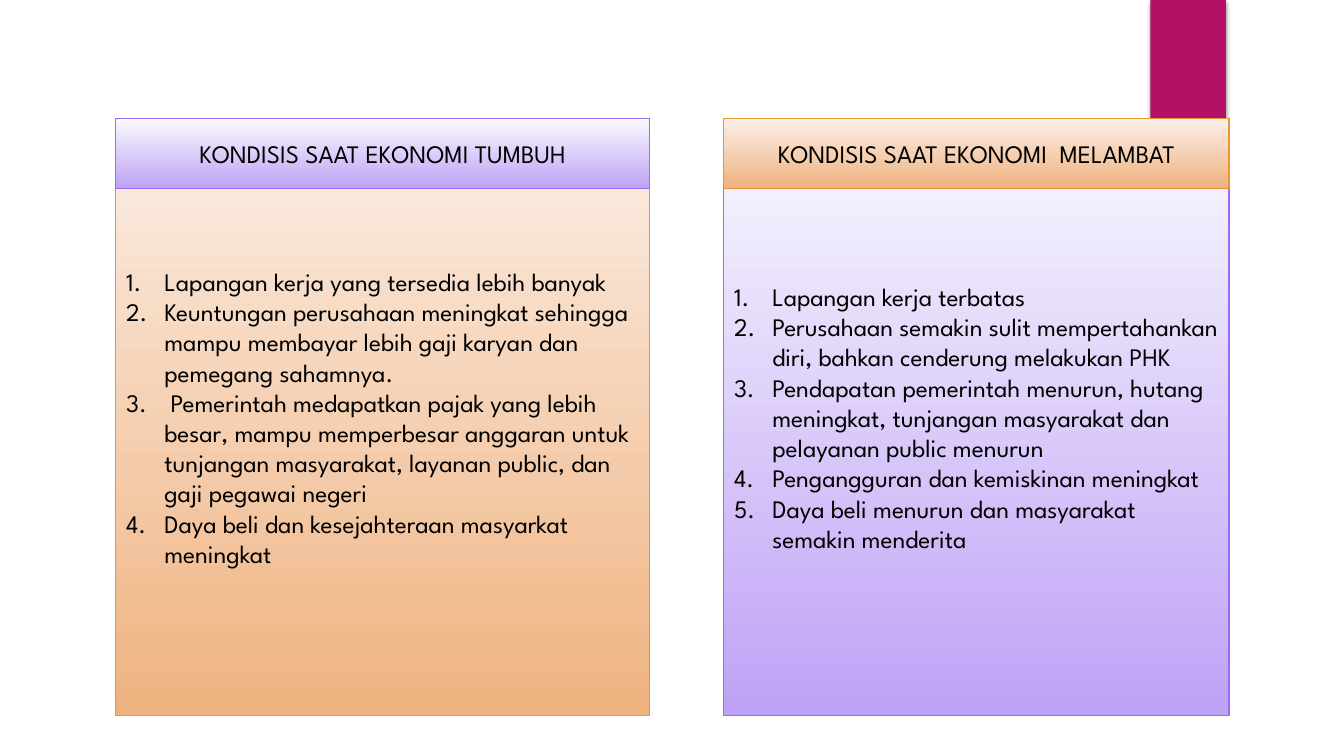
from lxml.etree import SubElement
from pptx import Presentation
from pptx.dml.color import RGBColor
from pptx.enum.shapes import MSO_SHAPE
from pptx.enum.text import MSO_ANCHOR, MSO_AUTO_SIZE, PP_ALIGN
from pptx.oxml.ns import qn
from pptx.util import Inches, Pt

FONT = "League Spartan"
BLACK = RGBColor(0, 0, 0)
MAGENTA = RGBColor(0xB3, 0x11, 0x66)
ORANGE = (RGBColor(0xFB, 0xEF, 0xE7), RGBColor(0xEF, 0xB2, 0x7F), RGBColor(0xE9, 0x94, 0x3A))
PURPLE = (RGBColor(0xFA, 0xF9, 0xFE), RGBColor(0xBE, 0xA2, 0xF6), RGBColor(0x9B, 0x6B, 0xF2))

TOP, HEADING_HEIGHT, PANEL_HEIGHT = 1.18, 0.69, 5.92
INDENT = Inches(0.38)

CONDITIONS = [
    {
        "heading": "KONDISIS SAAT EKONOMI TUMBUH",
        "points": [
            "Lapangan kerja yang tersedia lebih banyak",
            "Keuntungan perusahaan meningkat sehingga mampu membayar lebih gaji karyan dan pemegang sahamnya.",
            " Pemerintah medapatkan pajak yang lebih besar, mampu memperbesar anggaran untuk tunjangan masyarakat, layanan public, dan gaji pegawai negeri",
            "Daya beli dan kesejahteraan masyarkat meningkat",
        ],
        "left": 1.15, "width": 5.29,
        "heading_colors": PURPLE, "points_colors": ORANGE,
    },
    {
        "heading": "KONDISIS SAAT EKONOMI  MELAMBAT",
        "points": [
            "Lapangan kerja terbatas",
            "Perusahaan semakin sulit mempertahankan diri, bahkan cenderung melakukan PHK",
            "Pendapatan pemerintah menurun, hutang meningkat, tunjangan masyarakat dan pelayanan public menurun",
            "Pengangguran dan kemiskinan meningkat",
            "Daya beli menurun dan masyarakat semakin menderita",
        ],
        "left": 7.18, "width": 5.01,
        "heading_colors": ORANGE, "points_colors": PURPLE,
    },
]


def place(panel, condition, height, colors):
    panel.left, panel.top = Inches(condition["left"]), Inches(TOP)
    panel.width, panel.height = Inches(condition["width"]), Inches(height)
    light, dark, edge = colors
    panel.fill.gradient()
    panel.fill.gradient_angle = 270
    for stop, color, position in zip(panel.fill.gradient_stops, (light, dark), (0, 1)):
        stop.color.rgb = color
        stop.position = position
    panel.line.color.rgb = edge
    panel.line.width = Pt(0.75)


def write(panel, lines, numbered):
    frame = panel.text_frame
    frame.word_wrap = True
    frame.auto_size = MSO_AUTO_SIZE.NONE
    frame.vertical_anchor = MSO_ANCHOR.MIDDLE
    for index, line in enumerate(lines):
        paragraph = frame.paragraphs[0] if index == 0 else frame.add_paragraph()
        paragraph.space_before = Pt(0)
        paragraph.alignment = PP_ALIGN.LEFT if numbered else PP_ALIGN.CENTER
        if numbered:
            properties = paragraph._p.get_or_add_pPr()
            properties.set("marL", str(INDENT))
            properties.set("indent", str(-INDENT))
            SubElement(properties, qn("a:buFontTx"))
            SubElement(properties, qn("a:buAutoNum"), type="arabicPeriod")
        run = paragraph.add_run()
        run.text = line
        run.font.name = FONT
        run.font.size = Pt(18)
        run.font.bold = False
        run.font.color.rgb = BLACK


def add_ribbon(slide):
    ribbon = slide.shapes.add_shape(
        MSO_SHAPE.RECTANGLE, Inches(11.41), 0, Inches(0.75), Inches(1.25))
    ribbon.fill.solid()
    ribbon.fill.fore_color.rgb = MAGENTA
    ribbon.line.fill.background()
    ribbon.shadow.inherit = False
    effects = ribbon._element.spPr.find(qn("a:effectLst"))
    shadow = SubElement(effects, qn("a:outerShdw"), blurRad=str(Pt(3)),
                        dist=str(Pt(2)), dir="5400000", rotWithShape="0")
    shade = SubElement(shadow, qn("a:srgbClr"), val=str(BLACK))
    SubElement(shade, qn("a:alpha"), val="45000")
    slide.shapes._spTree.insert(2, ribbon._element)


def main():
    deck = Presentation()
    deck.slide_width, deck.slide_height = Inches(13.33), Inches(7.5)
    slide = deck.slides.add_slide(deck.slide_layouts.get_by_name("Comparison"))
    title, *panels = slide.placeholders
    title._element.getparent().remove(title._element)
    add_ribbon(slide)
    for condition, heading, points in zip(CONDITIONS, panels[::2], panels[1::2]):
        place(heading, condition, HEADING_HEIGHT, condition["heading_colors"])
        place(points, condition, PANEL_HEIGHT, condition["points_colors"])
        write(heading, [condition["heading"]], numbered=False)
        write(points, condition["points"], numbered=True)
        points._element.addnext(heading._element)
    deck.save("out.pptx")


if __name__ == "__main__":
    main()
